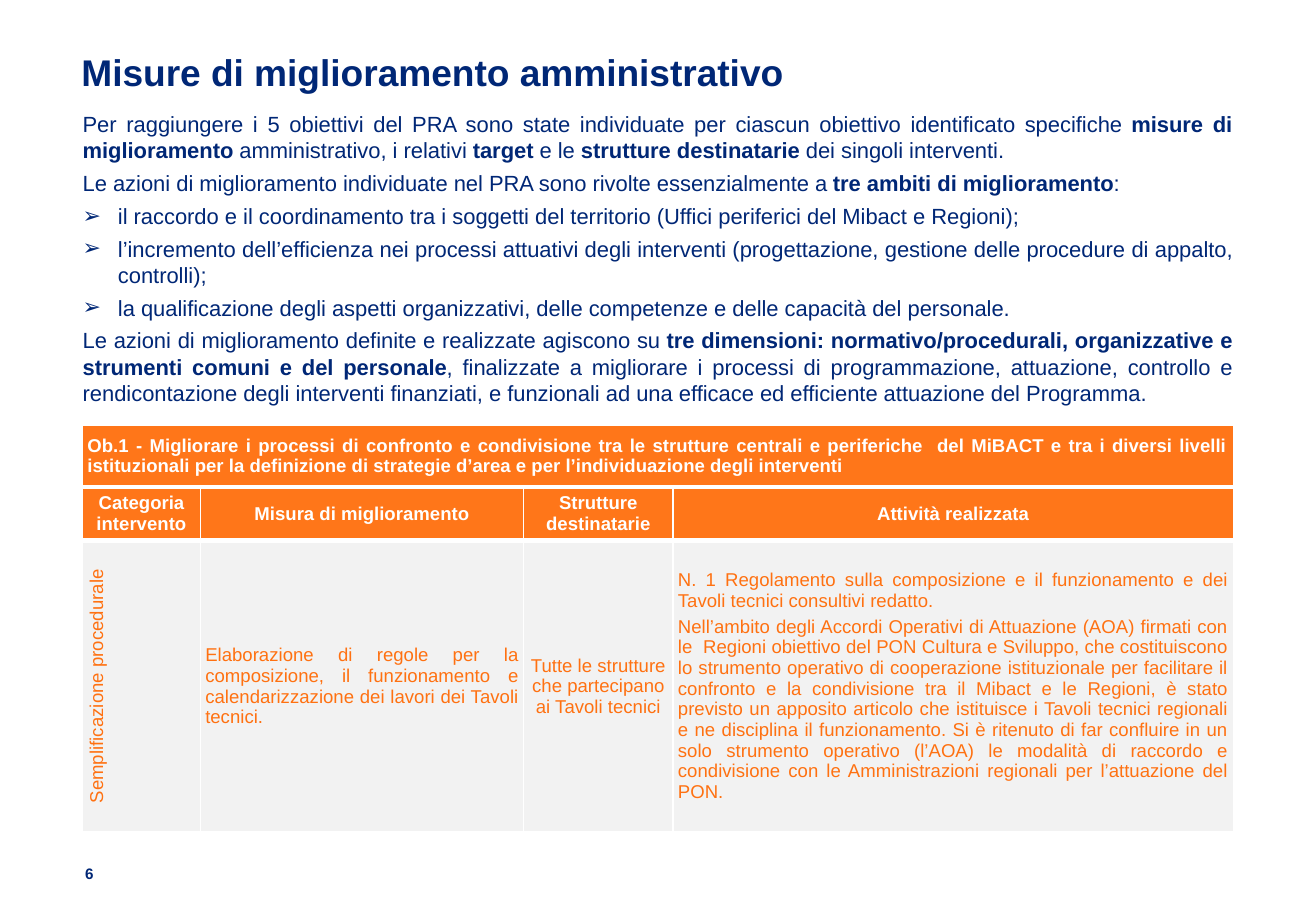
import pptx
import pptx.util
import pptx.dml.color
import pptx.enum.text
import pptx.oxml
import pptx.oxml.ns

Inches, Pt = pptx.util.Inches, pptx.util.Pt
ALIGN = pptx.enum.text.PP_ALIGN
ANCHOR = pptx.enum.text.MSO_ANCHOR
NAVY, ORANGE, TEXT_ORANGE, GREY, WHITE = "002776", "FF7619", "FF7111", "F2F2F2", "FFFFFF"

INTRO = [
    ("Per raggiungere i 5 obiettivi del PRA sono state individuate per ciascun obiettivo identificato "
     "specifiche *misure di miglioramento* amministrativo, i relativi *target* e le "
     "*strutture destinatarie* dei singoli interventi.", False),
    ("Le azioni di miglioramento individuate nel PRA sono rivolte essenzialmente a "
     "*tre ambiti di miglioramento*:", False),
    ("il raccordo e il coordinamento tra i soggetti del territorio "
     "(Uffici periferici del Mibact e Regioni);", True),
    ("l’incremento dell’efficienza nei processi attuativi degli interventi "
     "(progettazione, gestione delle procedure di appalto, controlli);", True),
    ("la qualificazione degli aspetti organizzativi, delle competenze e delle capacità del personale.", True),
    ("Le azioni di miglioramento definite e realizzate agiscono su *tre dimensioni: "
     "normativo/procedurali, organizzative e strumenti comuni e del personale*, finalizzate a migliorare "
     "i processi di programmazione, attuazione, controllo e rendicontazione degli interventi finanziati, "
     "e funzionali ad una efficace ed efficiente attuazione del Programma.", False),
]
OBJECTIVE = ("Ob.1 - Migliorare i processi di confronto e condivisione tra le strutture centrali e periferiche"
             "  del MiBACT e tra i diversi livelli istituzionali per la definizione di strategie d’area "
             "e per l’individuazione degli interventi")
HEADERS = ["Categoria intervento", "Misura di miglioramento", "Strutture destinatarie", "Attività realizzata"]
MEASURE = [
    (["Semplificazione procedurale"], ALIGN.CENTER),
    (["Elaborazione di regole per la composizione, il funzionamento e calendarizzazione "
      "dei lavori dei Tavoli tecnici."], ALIGN.JUSTIFY),
    (["Tutte le strutture che partecipano ai Tavoli tecnici"], ALIGN.CENTER),
    (["N. 1 Regolamento sulla composizione e il funzionamento e dei Tavoli tecnici consultivi redatto.",
      "Nell’ambito degli Accordi Operativi di Attuazione (AOA) firmati con le  Regioni obiettivo del PON "
      "Cultura e Sviluppo, che costituiscono lo strumento operativo di cooperazione istituzionale per "
      "facilitare il confronto e la condivisione tra il Mibact e le Regioni, è stato previsto un apposito "
      "articolo che istituisce i Tavoli tecnici regionali e ne disciplina il funzionamento. Si è ritenuto "
      "di far confluire in un solo strumento operativo (l’AOA) le modalità di raccordo e condivisione con "
      "le Amministrazioni regionali per l’attuazione del PON."], ALIGN.JUSTIFY),
]


def rgb(color):
    return pptx.dml.color.RGBColor.from_string(color)


def apply(target, values):
    for name, value in values.items():
        setattr(target, name, value)


def xml(source):
    return pptx.oxml.parse_xml(source.replace(" ", f" {pptx.oxml.ns.nsdecls('a')} ", 1))


class SlideBuilder:
    font = "Arial"

    def __init__(self, prs):
        self.s = prs.slides.add_slide(prs.slide_layouts[1])

    def paragraph(self, p, text, size, color, bold=False, **format_values):
        """Fill a paragraph; text between asterisks is set in bold."""
        apply(p, format_values)
        for i, part in enumerate(text.split("*")):
            if part:
                r = p.add_run()
                r.text = part
                apply(r.font, {"name": self.font, "size": Pt(size), "bold": bold or i % 2 == 1})
                r.font.color.rgb = rgb(color)

    def frame(self, sp, box, inset=(0, 0)):
        apply(sp, dict(zip(("left", "top", "width", "height"), map(Inches, box))))
        x, y = map(Inches, inset)
        tf = sp.text_frame
        apply(tf, {"margin_left": x, "margin_right": x, "margin_top": y, "margin_bottom": y,
                   "word_wrap": True, "vertical_anchor": ANCHOR.TOP,
                   "auto_size": pptx.enum.text.MSO_AUTO_SIZE.NONE})
        return tf

    def title(self, text, box):
        tf = self.frame(self.s.shapes.title, box)
        self.paragraph(tf.paragraphs[0], text, 22, NAVY, True, alignment=ALIGN.LEFT, line_spacing=Pt(32))

    def body(self, items, box):
        tf = self.frame(self.s.placeholders[1], box, (0.09, 0.05))
        for i, (text, bulleted) in enumerate(items):
            p = tf.add_paragraph() if i else tf.paragraphs[0]
            self.paragraph(p, text, 13, NAVY, alignment=ALIGN.JUSTIFY,
                           space_before=Pt(1.9), space_after=Pt(1.9))
            indent = Inches(0.29) if bulleted else 0
            pPr = p._p.get_or_add_pPr()
            pPr.set("marL", str(indent))
            pPr.set("indent", str(-indent))
            pPr.append(xml('<a:buChar char="➢"/>' if bulleted else "<a:buNone />"))

    def page_number(self, text, box):
        tf = self.frame(self.s.shapes.add_textbox(0, 0, 0, 0), box)
        self.paragraph(tf.paragraphs[0], text, 9, NAVY, True, line_spacing=Pt(11.3))

    def table(self, box, widths, heights):
        table = self.s.shapes.add_table(len(heights), len(widths), *map(Inches, box)).table
        for column, width in zip(table.columns, widths):
            column.width = Inches(width)
        for row, height in zip(table.rows, heights):
            row.height = Inches(height)
        return table

    def cell(self, cell, texts, align, fill, color, bold, top, bottom):
        """Write one cell; top and bottom are border widths in points."""
        x, y = Inches(0.04), Inches(0.03)
        apply(cell, {"margin_left": x, "margin_right": x, "margin_top": y, "margin_bottom": y,
                     "vertical_anchor": ANCHOR.MIDDLE})
        cell.fill.solid()
        cell.fill.fore_color.rgb = rgb(fill)
        for i, (side, width) in enumerate(zip("LRTB", (1, 1, top, bottom))):
            cell._tc.get_or_add_tcPr().insert(i, xml(
                f'<a:ln{side} w="{Pt(width)}"><a:solidFill><a:srgbClr val="{WHITE}"/>'
                f'</a:solidFill></a:ln{side}>'))
        tf = cell.text_frame
        for i, text in enumerate(texts):
            p = tf.add_paragraph() if i else tf.paragraphs[0]
            self.paragraph(p, text, 11, color, bold, alignment=align,
                           space_after=Pt(3 if len(texts) > 1 else 0))


def main():
    prs = pptx.Presentation()
    apply(prs, {"slide_width": Inches(10.83), "slide_height": Inches(7.5)})
    slide = SlideBuilder(prs)
    slide.title("Misure di miglioramento amministrativo", (0.67, 0.33, 9.86, 0.69))
    slide.body(INTRO, (0.59, 0.86, 9.64, 2.56))
    slide.page_number("6", (0.7, 7.11, 0.34, 0.16))

    table = slide.table((0.68, 3.5, 9.47, 3.35), (0.97, 2.66, 1.23, 4.61), (0.51, 0.44, 2.4))
    table.cell(0, 0).merge(table.cell(0, 3))
    slide.cell(table.cell(0, 0), [OBJECTIVE], ALIGN.JUSTIFY, ORANGE, WHITE, True, 1, 3)
    for col, (header, (texts, align)) in enumerate(zip(HEADERS, MEASURE)):
        slide.cell(table.cell(1, col), [header], ALIGN.CENTER, ORANGE, WHITE, True, 3, 3)
        slide.cell(table.cell(2, col), texts, align, GREY, TEXT_ORANGE, False, 3, 1)
    table.cell(2, 0)._tc.get_or_add_tcPr().set("vert", "vert270")
    prs.save("out.pptx")


if __name__ == "__main__":
    main()
